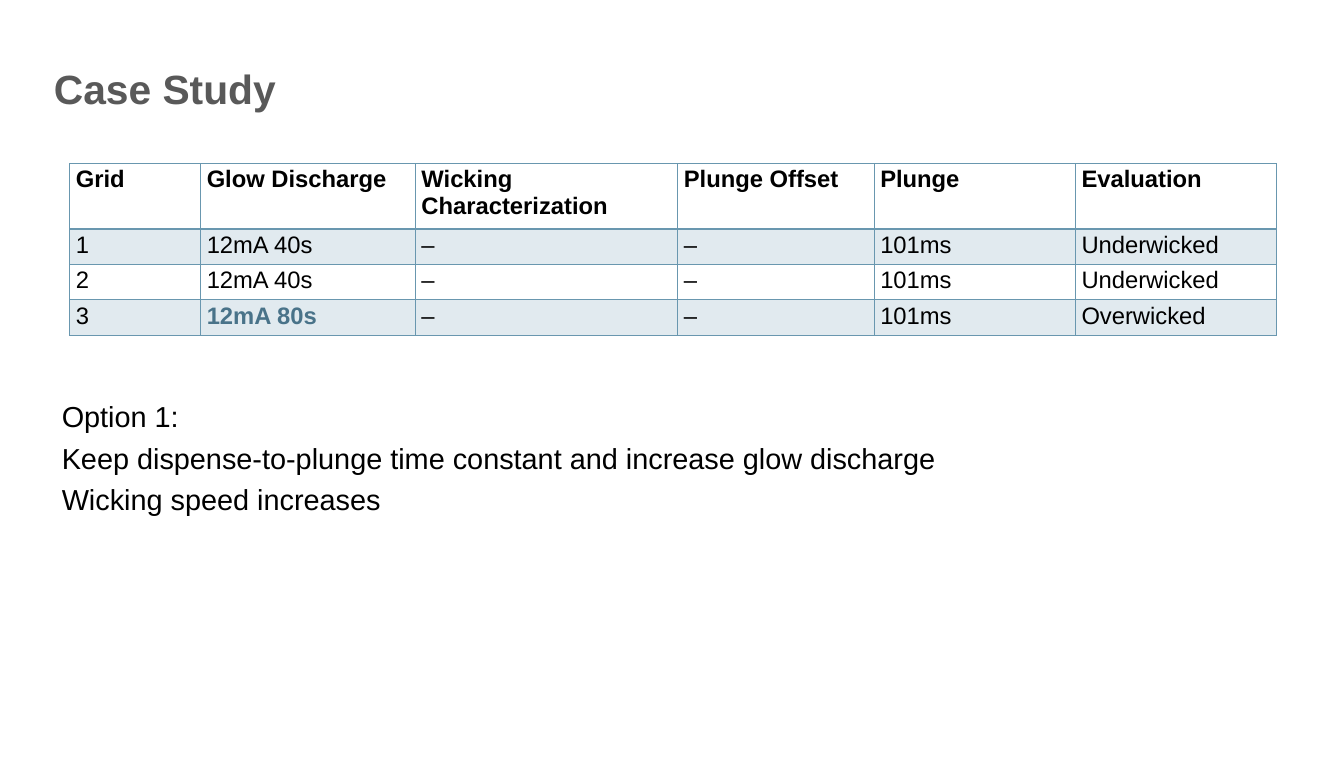
import pptx
import pptx.dml.color
import pptx.enum.text
import pptx.oxml
import pptx.oxml.ns
import pptx.util
from dataclasses import dataclass

Inches = pptx.util.Inches
Pt = pptx.util.Pt

TITLE = "Case Study"
HEADERS = ["Grid", "Glow Discharge", "Wicking Characterization",
           "Plunge Offset", "Plunge", "Evaluation"]
GRIDS = [
    ["1", "12mA 40s", "–", "–", "101ms", "Underwicked"],
    ["2", "12mA 40s", "–", "–", "101ms", "Underwicked"],
    ["3", "12mA 80s", "–", "–", "101ms", "Overwicked"],
]
CHANGED_SETTING = "12mA 80s"
OPTION_LINES = [
    "Option 1:",
    "Keep dispense-to-plunge time constant and increase glow\u00a0discharge",
    "Wicking speed increases",
]
COLUMN_WIDTHS = [2.14, 3.51, 4.29, 3.21, 3.29, 3.29]
HEADER_HEIGHT = 1.07
ROW_HEIGHT = 0.58


@dataclass(frozen=True)
class Theme:
    font: str = "Arial"
    title: str = "595959"
    text: str = "000000"
    accent: str = "497389"
    border: str = "6997AF"
    band_opacity: int = 20
    title_size: int = 48
    table_size: int = 28
    body_size: int = 34


THEME = Theme()


def write_text(paragraph, text, size, color=THEME.text, bold=False, before=0, spacing=None):
    run = paragraph.add_run()
    run.text = text
    run.font.name = THEME.font
    run.font.size = Pt(size)
    run.font.bold = bold
    run.font.color.rgb = pptx.dml.color.RGBColor.from_string(color)
    paragraph.alignment = pptx.enum.text.PP_ALIGN.LEFT
    paragraph.space_before = Pt(before)
    if spacing:
        paragraph.line_spacing = spacing


def set_borders(cell, widths):
    namespace = pptx.oxml.ns.nsdecls("a")
    properties = cell._tc.get_or_add_tcPr()
    for side, width in widths.items():
        properties.append(pptx.oxml.parse_xml(
            f'<a:ln{side} {namespace} w="{Pt(width)}"><a:solidFill>'
            f'<a:srgbClr val="{THEME.border}"/></a:solidFill></a:ln{side}>'))


def fill_band(cell):
    cell.fill.solid()
    cell.fill.fore_color.rgb = pptx.dml.color.RGBColor.from_string(THEME.border)
    color = cell._tc.tcPr.find(
        f"{pptx.oxml.ns.qn('a:solidFill')}/{pptx.oxml.ns.qn('a:srgbClr')}")
    color.append(pptx.oxml.parse_xml(
        f'<a:alpha {pptx.oxml.ns.nsdecls("a")} val="{THEME.band_opacity * 1000}"/>'))


def add_title(slide):
    title = slide.shapes.title
    title.left, title.top = Inches(0.78), Inches(0.8)
    title.width, title.height = Inches(14.53), Inches(1.11)
    frame = title.text_frame
    frame.vertical_anchor = pptx.enum.text.MSO_ANCHOR.BOTTOM
    frame.auto_size = pptx.enum.text.MSO_AUTO_SIZE.NONE
    write_text(frame.paragraphs[0], TITLE, THEME.title_size,
               color=THEME.title, bold=True, spacing=0.9)


def add_grid_table(slide):
    rows = [HEADERS] + GRIDS
    heights = [HEADER_HEIGHT] + [ROW_HEIGHT] * len(GRIDS)
    table = slide.shapes.add_table(
        len(rows), len(HEADERS), Inches(1.14), Inches(2.67),
        Inches(sum(COLUMN_WIDTHS)), Inches(sum(heights))).table
    table.first_row = table.horz_banding = False
    for column, width in zip(table.columns, COLUMN_WIDTHS):
        column.width = Inches(width)
    for row_index, (values, height) in enumerate(zip(rows, heights)):
        table.rows[row_index].height = Inches(height)
        for column_index, value in enumerate(values):
            cell = table.cell(row_index, column_index)
            changed = value == CHANGED_SETTING
            write_text(cell.text_frame.paragraphs[0], value, THEME.table_size,
                       color=THEME.accent if changed else THEME.text,
                       bold=row_index == 0 or changed)
            set_borders(cell, {"L": 1, "R": 1, "T": 2 if row_index == 1 else 1,
                               "B": 2 if row_index == 0 else 1})
            if row_index % 2:
                fill_band(cell)
            else:
                cell.fill.background()


def add_option(slide):
    box = slide.shapes.add_textbox(Inches(0.81), Inches(6.42), Inches(20.24), Inches(4.49))
    frame = box.text_frame
    frame.word_wrap = True
    frame.margin_left = frame.margin_right = Inches(0.2)
    frame.margin_top = frame.margin_bottom = Inches(0.1)
    for index, line in enumerate(OPTION_LINES):
        paragraph = frame.add_paragraph() if index else frame.paragraphs[0]
        write_text(paragraph, line, THEME.body_size, before=8 if index else 0)


def main():
    presentation = pptx.Presentation()
    presentation.slide_width = Inches(21.97)
    presentation.slide_height = Inches(12.37)
    slide = presentation.slides.add_slide(presentation.slide_layouts[5])
    add_title(slide)
    add_grid_table(slide)
    add_option(slide)
    presentation.save("out.pptx")


if __name__ == "__main__":
    main()
